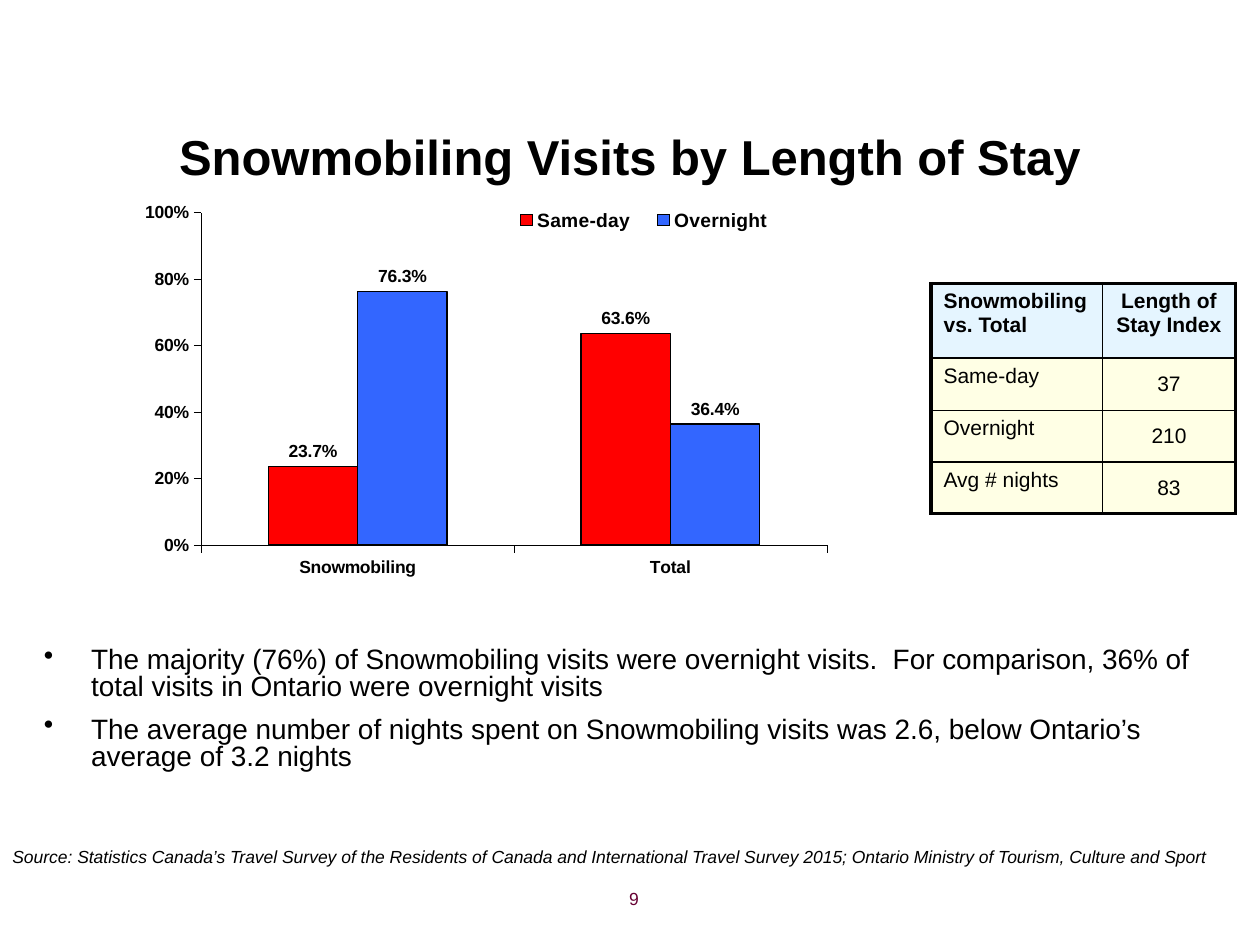
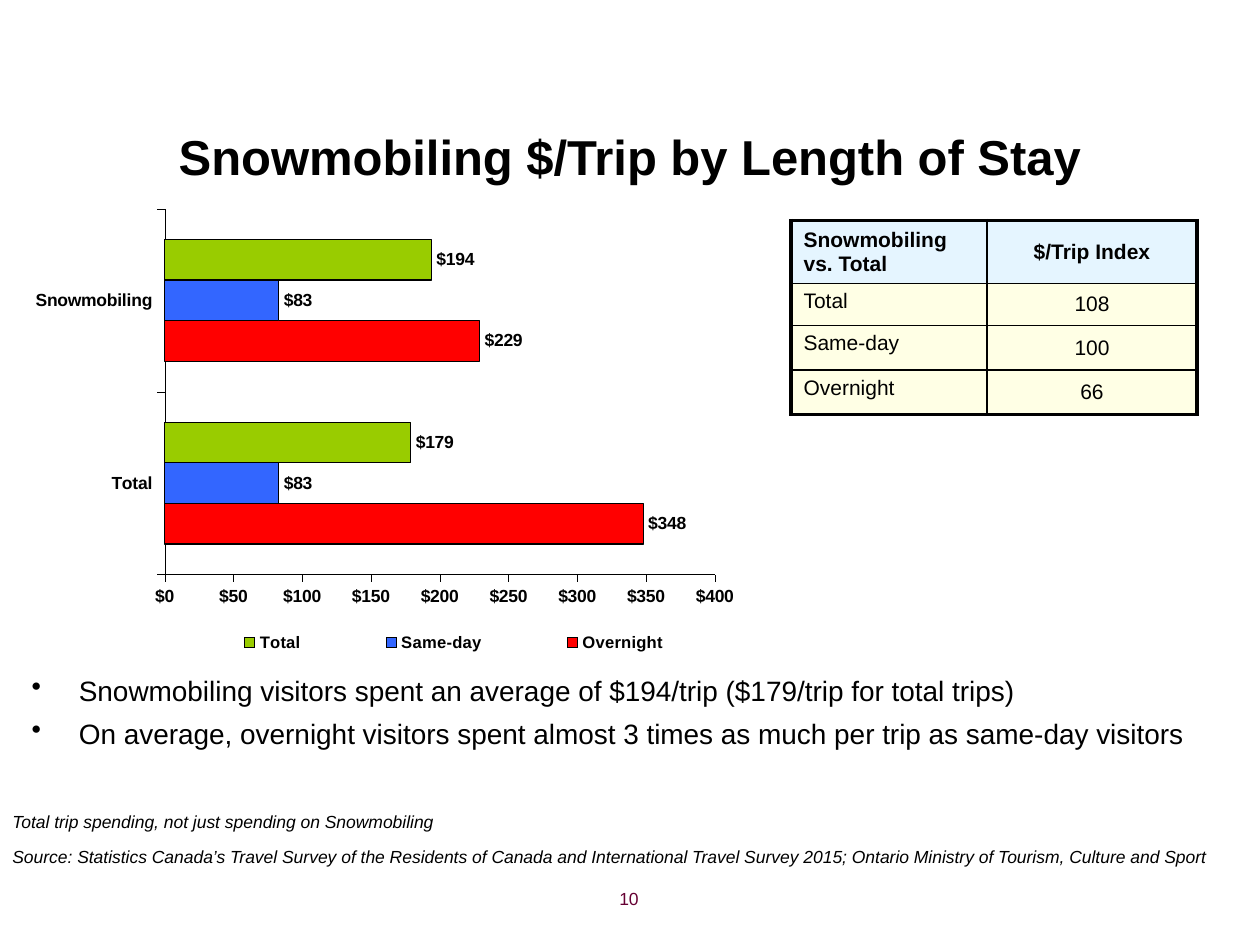
from lxml.etree import SubElement
from pptx import Presentation
from pptx.chart.data import CategoryChartData
from pptx.dml.color import RGBColor
from pptx.enum.chart import XL_CHART_TYPE, XL_LABEL_POSITION, XL_LEGEND_POSITION, XL_TICK_MARK
from pptx.enum.text import MSO_ANCHOR, PP_ALIGN
from pptx.oxml import parse_xml
from pptx.oxml.ns import nsdecls, qn
from pptx.util import Pt

BLACK = RGBColor(0x00, 0x00, 0x00)
MAROON = RGBColor(0x66, 0x00, 0x33)
RED = RGBColor(0xFF, 0x00, 0x00)
BLUE = RGBColor(0x33, 0x66, 0xFF)
GREEN = RGBColor(0x99, 0xCC, 0x00)
ICE = RGBColor(0xCC, 0xEC, 0xFF)
CREAM = RGBColor(0xFF, 0xFF, 0xCC)
FONT = "Arial"
OUTER_LINE = 2.25
INNER_LINE = 1
SOURCE = ("Source: Statistics Canada’s Travel Survey of the Residents of Canada and "
          "International Travel Survey 2015; Ontario Ministry of Tourism, Culture and Sport")


def style_font(font, size, color=BLACK, bold=False, italic=False):
    font.name = FONT
    font.size = Pt(size)
    font.color.rgb = color
    font.bold = bold
    font.italic = italic


def add_text(page, text, left, top, width, height, size, align=PP_ALIGN.LEFT,
             anchor=MSO_ANCHOR.TOP, **font_style):
    box = page.shapes.add_textbox(Pt(left), Pt(top), Pt(width), Pt(height))
    frame = box.text_frame
    frame.word_wrap = True
    frame.vertical_anchor = anchor
    frame.text = text
    for para in frame.paragraphs:
        para.alignment = align
        for span in para.runs:
            style_font(span.font, size, **font_style)
    return box


def add_title(page, text):
    add_text(page, text, 36, 62, 648, 54, 28, PP_ALIGN.CENTER, MSO_ANCHOR.MIDDLE, bold=True)


def add_note(page, text, top):
    add_text(page, text, 0, top, 706, 19.5, 10, italic=True)


def add_footer(page, number):
    add_note(page, SOURCE, 480)
    add_text(page, str(number), 204, 504, 168, 25, 10, PP_ALIGN.RIGHT, color=MAROON)


def add_bullets(page, lines, left, top, height):
    box = add_text(page, "\n".join(lines), left, top, 684, height, 16)
    for index, para in enumerate(box.text_frame.paragraphs):
        properties = para._p.get_or_add_pPr()
        properties.set("marL", str(Pt(27)))
        properties.set("indent", str(-Pt(27)))
        SubElement(properties, qn("a:buChar")).set("char", "•")
        para.line_spacing = 0.8
        if index:
            para.space_before = Pt(9)


def set_borders(cell, widths):
    properties = cell._tc.get_or_add_tcPr()
    for side, width in widths.items():
        properties.append(parse_xml(
            f'<a:ln{side} {nsdecls("a")} w="{Pt(width)}"><a:solidFill>'
            f'<a:srgbClr val="{BLACK}"/></a:solidFill></a:ln{side}>'))


def fill_half(cell, color):
    cell.fill.solid()
    cell.fill.fore_color.rgb = color
    swatch = cell._tc.tcPr.find(qn("a:solidFill"))[0]
    SubElement(swatch, qn("a:alpha")).set("val", "50000")


def add_index_table(page, rows, left, top, widths, heights, header_anchor):
    frame = page.shapes.add_table(len(rows), len(widths), Pt(left), Pt(top),
                                  Pt(sum(widths)), Pt(sum(heights)))
    table = frame.table
    table.first_row = table.horz_banding = False
    for column, width in zip(table.columns, widths):
        column.width = Pt(width)
    for r, (values, height) in enumerate(zip(rows, heights)):
        table.rows[r].height = Pt(height)
        for c, value in enumerate(values):
            cell = table.cell(r, c)
            header, is_value = r == 0, c > 0
            cell.text = value
            para = cell.text_frame.paragraphs[0]
            para.alignment = PP_ALIGN.CENTER if is_value else PP_ALIGN.LEFT
            style_font(para.runs[0].font, 12, bold=header)
            if header:
                cell.vertical_anchor = header_anchor
            elif is_value:
                cell.vertical_anchor = MSO_ANCHOR.MIDDLE
                cell.margin_left = cell.margin_right = cell.margin_top = cell.margin_bottom = 0
            edges = {"L": c == 0, "R": c == len(widths) - 1,
                     "T": header, "B": r == len(rows) - 1}
            set_borders(cell, {side: OUTER_LINE if outer else INNER_LINE
                               for side, outer in edges.items()})
            fill_half(cell, ICE if header else CREAM)


def set_layout(parent, position, area, inner=False):
    for old in parent.findall(qn("c:layout")):
        parent.remove(old)
    target = '<c:layoutTarget val="inner"/>' if inner else ""
    modes = '<c:xMode val="edge"/><c:yMode val="edge"/>'
    sizes = "".join(f'<c:{key} val="{value}"/>' for key, value in zip("xywh", area))
    parent.insert(position, parse_xml(
        f'<c:layout {nsdecls("c")}><c:manualLayout>{target}{modes}{sizes}'
        '</c:manualLayout></c:layout>'))


def style_axis(axis):
    axis.has_major_gridlines = False
    axis.major_tick_mark = XL_TICK_MARK.OUTSIDE
    axis.minor_tick_mark = XL_TICK_MARK.NONE
    axis.format.line.color.rgb = BLACK
    axis.format.line.width = Pt(0.2)
    style_font(axis.tick_labels.font, 10, bold=True)


def add_bar_chart(page, kind, bounds, categories, series, maximum, step, axis_format,
                  label_format, plot_area, legend_position, legend_area, legend_size):
    data = CategoryChartData()
    data.categories = categories
    for name, values, _ in series:
        data.add_series(name, values)
    chart = page.shapes.add_chart(kind, *map(Pt, bounds), data).chart
    chart.has_title = False
    style_font(chart.font, 10, bold=True)

    for axis in (chart.category_axis, chart.value_axis):
        style_axis(axis)
    scale = chart.value_axis
    scale.minimum_scale, scale.maximum_scale, scale.major_unit = 0, maximum, step
    scale.tick_labels.number_format = axis_format
    scale.tick_labels.number_format_is_linked = False

    plot = chart.plots[0]
    plot.vary_by_categories = False
    plot.gap_width = 150
    plot.overlap = 0
    for bars, (_, _, color) in zip(plot.series, series):
        bars.invert_if_negative = False
        bars.format.fill.solid()
        bars.format.fill.fore_color.rgb = color
        bars.format.line.color.rgb = BLACK
        bars.format.line.width = Pt(0.75)
        labels = bars.data_labels
        labels.show_value = True
        labels.position = XL_LABEL_POSITION.OUTSIDE_END
        labels.number_format = label_format
        labels.number_format_is_linked = False
        style_font(labels.font, 10, bold=True)

    chart.has_legend = True
    chart.legend.position = legend_position
    chart.legend.include_in_layout = False
    style_font(chart.legend.font, legend_size, bold=True)
    space = chart._chartSpace
    set_layout(space.xpath("c:chart/c:plotArea")[0], 0, plot_area, inner=True)
    set_layout(space.xpath("c:chart/c:legend")[0], 1, legend_area)


def build_visits(page):
    add_title(page, "Snowmobiling Visits by Length of Stay")
    add_index_table(
        page,
        [("Snowmobiling vs. Total", "Length of Stay Index"),
         ("Same-day", "37"), ("Overnight", "210"), ("Avg # nights", "83")],
        532, 162, (98, 76), (42.5, 30, 29.5, 29.5), MSO_ANCHOR.TOP)
    add_bullets(
        page,
        ["The majority (76%) of Snowmobiling visits were overnight visits.  "
         "For comparison, 36% of total visits in Ontario were overnight visits",
         "The average number of nights spent on Snowmobiling visits was 2.6, "
         "below Ontario’s average of 3.2 nights"],
        18, 367, 120)
    add_bar_chart(
        page, XL_CHART_TYPE.COLUMN_CLUSTERED, (60, 108, 550, 271.5),
        ("Snowmobiling", "Total"),
        [("Same-day", (0.237, 0.636), RED), ("Overnight", (0.763, 0.364), BLUE)],
        1, 0.2, "0%", "0.0%", (0.1, 0.05, 0.65, 0.7),
        XL_LEGEND_POSITION.RIGHT, (0.41, 0.03, 0.3, 0.07), 11)
    add_footer(page, 9)


def build_spending(page):
    add_title(page, "Snowmobiling $/Trip by Length of Stay")
    add_bullets(
        page,
        ["Snowmobiling visitors spent an average of $194/trip ($179/trip for total trips)",
         "On average, overnight visitors spent almost 3 times as much per trip "
         "as same-day visitors"],
        11, 385, 114)
    add_index_table(
        page,
        [("Snowmobiling vs. Total", "$/Trip Index"),
         ("Total", "108"), ("Same-day", "100"), ("Overnight", "66")],
        452, 126, (112, 120), (36, 24, 25.5, 25.5), MSO_ANCHOR.MIDDLE)
    add_bar_chart(
        page, XL_CHART_TYPE.BAR_CLUSTERED, (2, 114, 542, 268),
        ("Total", "Snowmobiling"),
        [("Overnight", (348, 229), RED), ("Same-day", (83, 83), BLUE),
         ("Total", (179, 194), GREEN)],
        400, 50, r"\$#,##0", r"\$#,##0", (0.17, 0.02, 0.58, 0.78),
        XL_LEGEND_POSITION.BOTTOM, (0.17, 0.91, 0.61, 0.07), 9.5)
    add_note(page, "Total trip spending, not just spending on Snowmobiling", 460)
    add_footer(page, 10)


def main():
    deck = Presentation()
    deck.slide_width = Pt(720)
    deck.slide_height = Pt(540)
    blank = deck.slide_layouts[6]
    for build in (build_visits, build_spending):
        build(deck.slides.add_slide(blank))
    deck.save("out.pptx")


if __name__ == "__main__":
    main()
